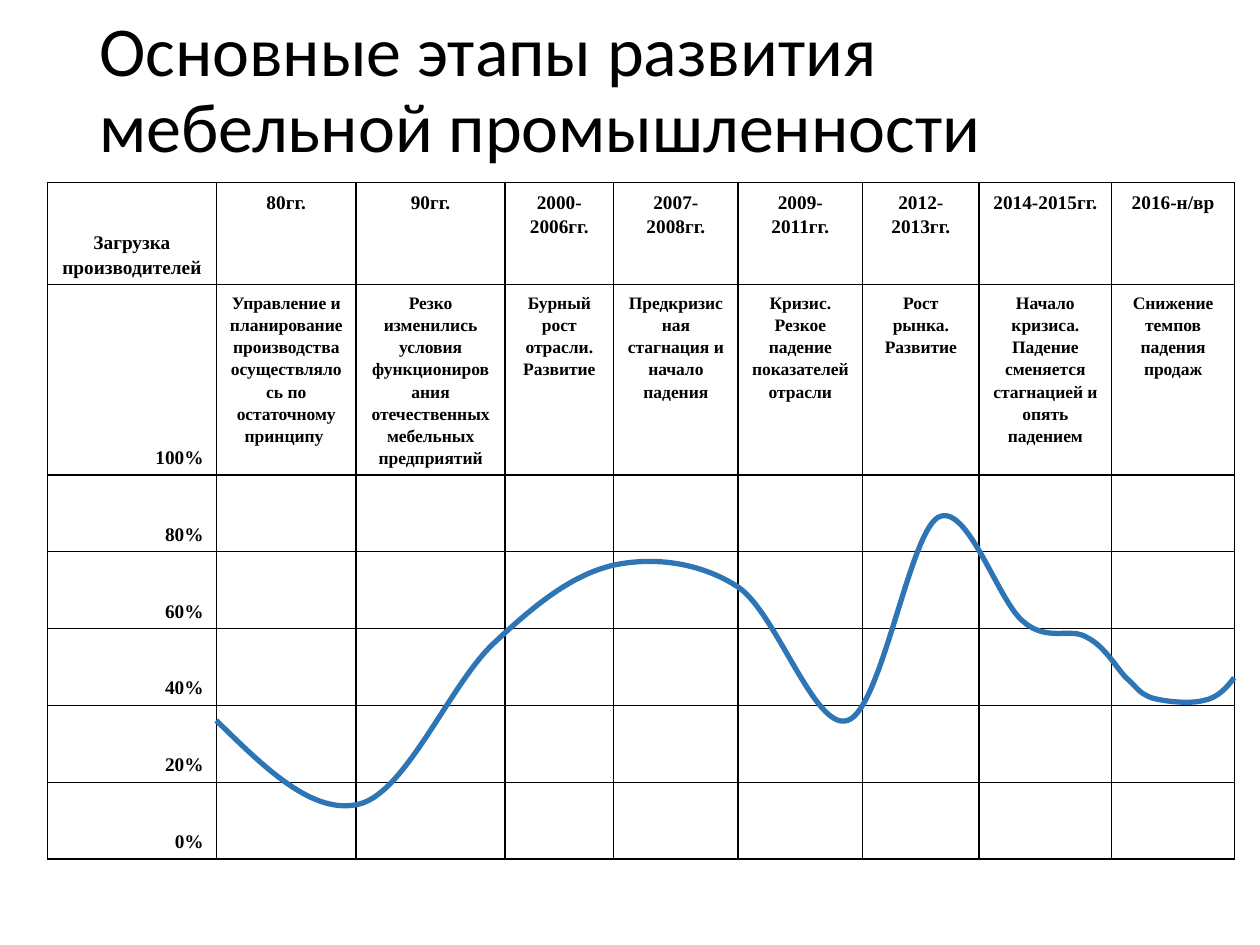
from dataclasses import dataclass

import pptx
import pptx.dml.color
import pptx.enum.text
import pptx.oxml
import pptx.oxml.ns
import pptx.util
from pptx.util import Cm

ALIGN = pptx.enum.text.PP_ALIGN
ANCHOR = pptx.enum.text.MSO_ANCHOR


@dataclass(frozen=True)
class Theme:
    ink: str = "000000"
    curve: str = "2E75B6"
    title_font: str = "Calibri"
    table_font: str = "Times New Roman"
    title_size: int = 40
    label_size: int = 11
    stage_size: int = 10
    border_width: int = 1
    curve_width: int = 3


THEME = Theme()

TITLE = "Основные этапы развития мебельной промышленности"
CORNER = "Загрузка производителей"
STAGES = [
    ("80гг.", "Управление и планирование производства осуществлялось "
              "по остаточному принципу "),
    ("90гг.", "Резко изменились условия функционирования "
              "отечественных мебельных предприятий"),
    ("2000-2006гг.", "Бурный рост отрасли. Развитие"),
    ("2007-2008гг.", "Предкризисная стагнация и начало падения"),
    ("2009-2011гг.", "Кризис. Резкое падение показателей отрасли"),
    ("2012-2013гг.", "Рост рынка. Развитие"),
    ("2014-2015гг.", "Начало кризиса. Падение сменяется стагнацией и опять падением"),
    ("2016-н/вр", "Снижение темпов падения продаж"),
]
LOADS = [f"{load}%" for load in range(100, -1, -20)]

COLUMN_WIDTHS = [3.4, 2.82, 3.0, 2.19, 2.51, 2.51, 2.35, 2.67, 2.48]
PERIOD_HEIGHT, STAGE_HEIGHT, LOAD_HEIGHT = 2.06, 3.83, 1.55
ROW_HEIGHTS = [PERIOD_HEIGHT, STAGE_HEIGHT] + [LOAD_HEIGHT] * (len(LOADS) - 1)

# Bezier points of the load curve: cm from the first period, load in percent.
# After the start, each row holds two control points and an end point.
CURVE_START = (0, 36.1)
CURVE_SEGMENTS = [
    [(0.99, 23.6), (1.96, 11.2), (2.9, 14.4)],
    [(3.84, 17.7), (4.72, 45.6), (5.59, 56.1)],
    [(6.43, 66.3), (7.16, 73.8), (7.98, 76.4)],
    [(8.79, 78.7), (9.73, 77.4), (10.52, 70.8)],
    [(11.3, 64), (12.07, 33.1), (12.73, 36.1)],
    [(13.41, 39), (13.97, 84.6), (14.55, 88.9)],
    [(15.14, 93.2), (15.77, 66.6), (16.28, 61.7)],
    [(16.76, 56.4), (17.22, 60.4), (17.55, 57.7)],
    [(17.91, 55.4), (18.14, 49.9), (18.34, 47.2)],
    [(18.57, 44.6), (18.59, 43.3), (18.85, 42)],
    [(19.1, 41), (19.63, 40.3), (19.91, 41.3)],
    [(20.19, 42), (20.37, 44.6), (20.52, 47.2)],
]


def rgb(value):
    return pptx.dml.color.RGBColor.from_string(value)


def write(frame, text, *, size, font=THEME.table_font, bold=True,
          align=ALIGN.CENTER, spacing=1.15):
    paragraph = frame.paragraphs[0]
    paragraph.text = text
    paragraph.alignment = align
    paragraph.line_spacing = spacing
    paragraph.font.name = font
    paragraph.font.size = pptx.util.Pt(size)
    paragraph.font.bold = bold
    paragraph.font.color.rgb = rgb(THEME.ink)


def add_title(slide, left, top, width, height):
    title = slide.shapes.title
    title.left, title.top = Cm(left), Cm(top)
    title.width, title.height = Cm(width), Cm(height)
    frame = title.text_frame
    frame.word_wrap = True
    frame.auto_size = pptx.enum.text.MSO_AUTO_SIZE.NONE
    frame.vertical_anchor = ANCHOR.MIDDLE
    write(frame, TITLE, size=THEME.title_size, font=THEME.title_font,
          bold=False, align=ALIGN.LEFT, spacing=0.9)


def format_cell(cell):
    """Give the cell black borders on all sides and no fill."""
    properties = cell._tc.get_or_add_tcPr()
    for side in "LRTB":
        properties.append(pptx.oxml.parse_xml(
            f'<a:ln{side} {pptx.oxml.ns.nsdecls("a")} '
            f'w="{pptx.util.Pt(THEME.border_width)}"><a:solidFill>'
            f'<a:srgbClr val="{THEME.ink}"/></a:solidFill></a:ln{side}>'))
    cell.fill.background()


def add_stage_table(slide, left, top):
    table = slide.shapes.add_table(
        len(ROW_HEIGHTS), len(COLUMN_WIDTHS), Cm(left), Cm(top),
        Cm(sum(COLUMN_WIDTHS)), Cm(sum(ROW_HEIGHTS))).table
    table.first_row = table.horz_banding = False
    for column, width in zip(table.columns, COLUMN_WIDTHS):
        column.width = Cm(width)
    for row, height in zip(table.rows, ROW_HEIGHTS):
        row.height = Cm(height)
    for cell in table.iter_cells():
        format_cell(cell)

    for row, label in enumerate([CORNER] + LOADS):
        cell = table.cell(row, 0)
        cell.vertical_anchor = ANCHOR.BOTTOM
        write(cell.text_frame, label, size=THEME.label_size,
              align=ALIGN.RIGHT if row else ALIGN.CENTER)
    for column, (period, stage) in enumerate(STAGES, start=1):
        write(table.cell(0, column).text_frame, period, size=THEME.label_size)
        write(table.cell(1, column).text_frame, stage, size=THEME.stage_size)


def add_load_curve(slide, left, top, height):
    """Draw the curve in a box whose top is 100% and whose bottom is 0%."""
    def place(point):
        x, load = point
        return Cm(left + x), Cm(top + height * (1 - load / 100))

    builder = slide.shapes.build_freeform(*place(CURVE_START))
    for segment in CURVE_SEGMENTS:
        builder.add_line_segments([place(point) for point in segment], close=False)
    curve = builder.convert_to_shape()
    curve.shadow.inherit = False
    curve.fill.background()
    curve.line.color.rgb = rgb(THEME.curve)
    curve.line.width = pptx.util.Pt(THEME.curve_width)

    # Every three straight steps become one Bezier segment.
    steps = list(curve._element.iter(pptx.oxml.ns.qn("a:lnTo")))
    for first in range(0, len(steps), 3):
        bezier = pptx.oxml.parse_xml(f'<a:cubicBezTo {pptx.oxml.ns.nsdecls("a")}/>')
        steps[first].addprevious(bezier)
        for step in steps[first:first + 3]:
            bezier.append(step[0])
            step.getparent().remove(step)


def add_stages_slide(deck):
    slide = deck.slides.add_slide(deck.slide_layouts[5])
    left, top = 0.96, 3.68
    add_title(slide, 1.75, 0, 21.9, 3.71)
    add_stage_table(slide, left, top)
    add_load_curve(slide, left + COLUMN_WIDTHS[0],
                   top + PERIOD_HEIGHT + STAGE_HEIGHT,
                   LOAD_HEIGHT * (len(LOADS) - 1))


def main():
    deck = pptx.Presentation()
    deck.slide_width, deck.slide_height = Cm(25.4), Cm(19.05)
    add_stages_slide(deck)
    deck.save("out.pptx")


if __name__ == "__main__":
    main()
